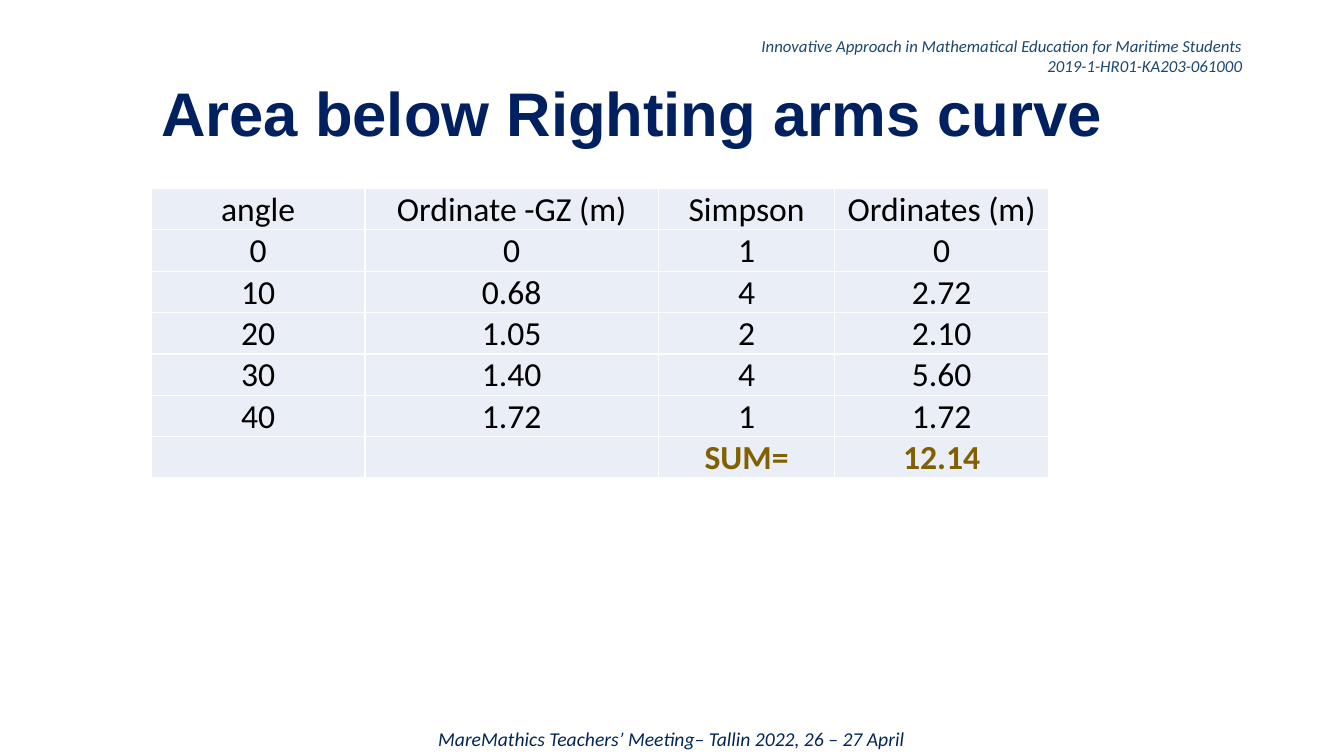
from lxml import etree
from pptx import Presentation
from pptx import util as u
from pptx.dml.color import RGBColor
from pptx.enum import text
from pptx.oxml.ns import qn

COLORS = {
    "header": "1C476E",
    "footer": "032659",
    "title": "002060",
    "body": "000000",
    "sum": "806000",
    "cell": "EAEFF7",
    "border": "FFFFFF",
}
ALIGN = text.PP_ALIGN
ANCHOR = text.MSO_ANCHOR


class SlideWriter:
    def __init__(self, page, font_name="Calibri"):
        self.page = page
        self.font_name = font_name

    def style(self, para, size, color, align, bold=False, italic=False, font_name=None):
        para.alignment = align
        font = para.font
        font.name = font_name or self.font_name
        font.size = u.Pt(size)
        font.bold = bold
        font.italic = italic
        font.color.rgb = RGBColor.from_string(COLORS[color])

    def text_box(self, place, lines, size, color, align, anchor=ANCHOR.MIDDLE,
                 line_spacing=None, **font_style):
        box = self.page.shapes.add_textbox(*map(u.Inches, place))
        frame = box.text_frame
        frame.word_wrap = True
        frame.vertical_anchor = anchor
        frame.text = "\n".join(lines)
        for para in frame.paragraphs:
            para.line_spacing = line_spacing
            self.style(para, size, color, align, **font_style)

    def border(self, cell):
        properties = cell._tc.get_or_add_tcPr()
        for position, side in enumerate(("lnL", "lnR", "lnT", "lnB")):
            line = etree.Element(qn(f"a:{side}"), w=str(u.Pt(1)))
            fill = etree.SubElement(line, qn("a:solidFill"))
            etree.SubElement(fill, qn("a:srgbClr"), val=COLORS["border"])
            properties.insert(position, line)

    def table(self, left, top, widths, row_height, rows, size):
        frame = self.page.shapes.add_table(
            len(rows), len(widths), u.Inches(left), u.Inches(top),
            u.Inches(sum(widths)), u.Inches(row_height * len(rows)))
        table = frame.table
        table.first_row = False
        table.horz_banding = False
        for column, width in zip(table.columns, widths):
            column.width = u.Inches(width)
        for row_index, values in enumerate(rows):
            color = "sum" if row_index == len(rows) - 1 else "body"
            for column_index, value in enumerate(values):
                cell = table.cell(row_index, column_index)
                cell.margin_left = cell.margin_right = cell.margin_top = u.Inches(0.01)
                cell.margin_bottom = 0
                cell.vertical_anchor = ANCHOR.MIDDLE
                cell.fill.solid()
                cell.fill.fore_color.rgb = RGBColor.from_string(COLORS["cell"])
                self.border(cell)
                cell.text = value
                self.style(cell.text_frame.paragraphs[0], size, color, ALIGN.CENTER,
                           bold=color == "sum")


def main():
    deck = Presentation()
    deck.slide_width = u.Inches(13.33)
    deck.slide_height = u.Inches(7.5)
    writer = SlideWriter(deck.slides.add_slide(deck.slide_layouts[6]))

    writer.text_box(
        (0.92, 0.3, 11.5, 0.5),
        ["Innovative Approach in Mathematical Education for Maritime Students",
         "2019-1-HR01-KA203-061000"],
        12, "header", ALIGN.RIGHT, italic=True)
    writer.text_box(
        (0.92, 7.16, 11.48, 0.34),
        ["MareMathics Teachers’ Meeting– Tallin 2022, 26 – 27 April"],
        14, "footer", ALIGN.CENTER, anchor=ANCHOR.TOP, italic=True)
    writer.text_box(
        (1.5, 0.75, 10.5, 0.81), ["Area below Righting arms curve"],
        44, "title", ALIGN.LEFT, line_spacing=0.9, bold=True, font_name="Arial")

    righting_arms = [
        ("angle", "Ordinate -GZ (m)", "Simpson", "Ordinates (m)"),
        ("0", "0", "1", "0"),
        ("10", "0.68", "4", "2.72"),
        ("20", "1.05", "2", "2.10"),
        ("30", "1.40", "4", "5.60"),
        ("40", "1.72", "1", "1.72"),
        ("", "", "SUM=", "12.14"),
    ]
    writer.table(1.5, 1.87, (2.12, 2.91, 1.75, 2.12), 0.41, righting_arms, 24)

    deck.save("out.pptx")


if __name__ == "__main__":
    main()
